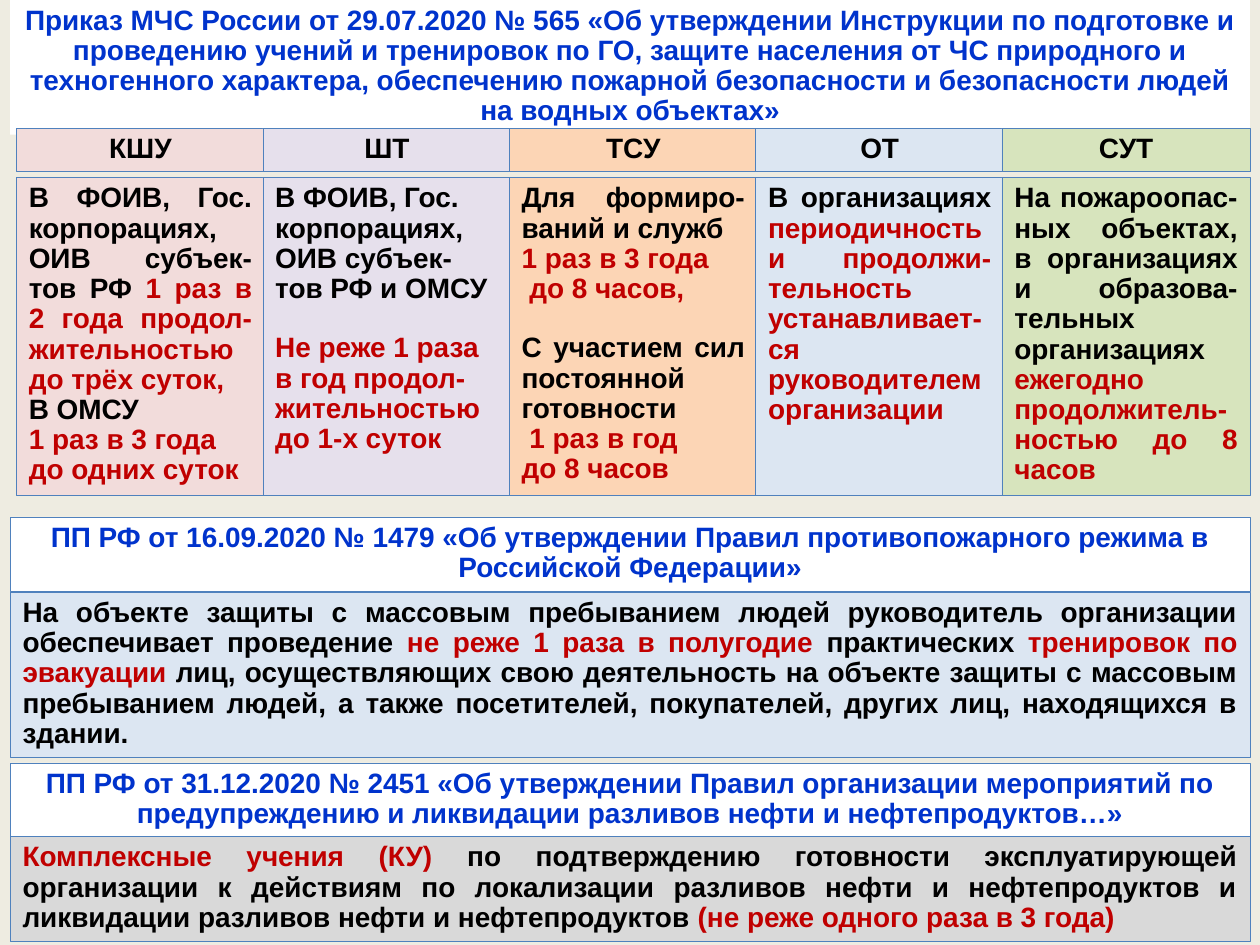
from dataclasses import dataclass

from pptx import Presentation
from pptx.dml.color import RGBColor
from pptx.enum.shapes import MSO_SHAPE
from pptx.enum.text import MSO_ANCHOR, MSO_AUTO_SIZE, PP_ALIGN
from pptx.util import Pt


@dataclass(frozen=True)
class Theme:
    font: str = "Arial"
    size: float = 16
    lines: float = 0.9
    gap: float = 16.6
    edge: float = 0.25
    back: str = "EEECE1"
    white: str = "FFFFFF"
    gray: str = "D9D9D9"
    pink: str = "F2DCDB"
    lilac: str = "E6E0EC"
    peach: str = "FCD5B5"
    sky: str = "DCE6F2"
    green: str = "D7E4BD"
    line: str = "4F81BD"
    ink: str = "000000"
    red: str = "C00000"
    blue: str = "0033CC"


@dataclass(frozen=True)
class Para:
    """Runs of (text, colour), with an optional empty line's space above."""
    runs: tuple
    gap: bool = False


T = Theme()
CENTER, LEFT, FULL = PP_ALIGN.CENTER, PP_ALIGN.LEFT, PP_ALIGN.JUSTIFY


def rgb(code):
    return RGBColor.from_string(code)


def para(*runs, gap=False):
    return Para(runs, gap)


def black(text, gap=False):
    return para((text, T.ink), gap=gap)


def red(text, gap=False):
    return para((text, T.red), gap=gap)


def write(frame, paras, align):
    frame.word_wrap = True
    frame.auto_size = MSO_AUTO_SIZE.SHAPE_TO_FIT_TEXT
    frame.vertical_anchor = MSO_ANCHOR.TOP
    for i, item in enumerate(paras):
        line = frame.add_paragraph() if i else frame.paragraphs[0]
        line.alignment = align
        line.line_spacing = T.lines
        if item.gap:
            line.space_before = Pt(T.gap)
        for text, color in item.runs:
            run = line.add_run()
            run.text = text
            run.font.name = T.font
            run.font.size = Pt(T.size)
            run.font.bold = True
            run.font.color.rgb = rgb(color)


def box(slide, area, fill, paras, align=FULL, edge=True):
    shape = slide.shapes.add_shape(MSO_SHAPE.RECTANGLE, *map(Pt, area))
    shape.shadow.inherit = False
    shape.fill.solid()
    shape.fill.fore_color.rgb = rgb(fill)
    if edge:
        shape.line.color.rgb = rgb(T.line)
        shape.line.width = Pt(T.edge)
    else:
        shape.line.fill.background()
    write(shape.text_frame, paras, align)


def band(slide, top, height, fill, paras, align=FULL, edge=True):
    """Box across the full width of the slide."""
    box(slide, (5.8, top, 708.5, height), fill, paras, align, edge)


def title(slide, top, height, text, edge=True):
    band(slide, top, height, T.white, [para((text, T.blue))], CENTER, edge)


COLUMNS = [
    ("КШУ", T.pink, FULL, [
        para(("В ФОИВ, Гос. корпорациях, ОИВ субъек-тов РФ ", T.ink),
             ("1 раз в 2 года продол-жительностью", T.red)),
        red("до трёх суток,"),
        black("В ОМСУ"),
        red("1 раз в 3 года"),
        red("до одних суток")]),
    ("ШТ", T.lilac, LEFT, [
        black("В ФОИВ, Гос. корпорациях, ОИВ субъек-тов РФ и ОМСУ"),
        red("Не реже 1 раза в год продол-жительностью до 1-х суток",
            gap=True)]),
    ("ТСУ", T.peach, FULL, [
        black("Для формиро-ваний и служб"),
        red("1 раз в 3 года"),
        red(" до 8 часов,"),
        black("С участием сил постоянной готовности", gap=True),
        red(" 1 раз в год"),
        red("до 8 часов")]),
    ("ОТ", T.sky, FULL, [
        para(("В организациях ", T.ink),
             ("периодичность и продолжи-тельность устанавливает-ся "
              "руководителем организации", T.red))]),
    ("СУТ", T.green, FULL, [
        para(("На пожароопас-ных объектах, в организациях и "
              "образова-тельных организациях ", T.ink),
             ("ежегодно продолжитель-ностью до 8 часов", T.red))]),
]


def columns(slide):
    left, step, width = 9.4, 140.8, 141.8
    for i, (name, fill, align, paras) in enumerate(COLUMNS):
        x = left + i * step
        box(slide, (x, 73.4, width, 24.5), fill, [black(name)], CENTER)
        box(slide, (x, 101.5, width, 181.4), fill, paras, align)


def main():
    deck = Presentation()
    deck.slide_width, deck.slide_height = Pt(720), Pt(540)
    slide = deck.slides.add_slide(deck.slide_layouts[6])
    slide.background.fill.solid()
    slide.background.fill.fore_color.rgb = rgb(T.back)

    title(slide, 0, 77, "Приказ МЧС России от 29.07.2020 № 565 "
          "«Об утверждении Инструкции по подготовке и проведению учений и "
          "тренировок по ГО, защите населения от ЧС природного и "
          "техногенного характера, обеспечению пожарной безопасности и "
          "безопасности людей на водных объектах»", edge=False)
    columns(slide)

    title(slide, 295.4, 42.2, "ПП РФ от 16.09.2020 № 1479 «Об утверждении "
          "Правил противопожарного режима в Российской Федерации»")
    band(slide, 338.4, 94.6, T.sky, [para(
        ("На объекте защиты с массовым пребыванием людей руководитель "
         "организации обеспечивает проведение ", T.ink),
        ("не реже 1 раза в полугодие ", T.red),
        ("практических ", T.ink),
        ("тренировок по эвакуации ", T.red),
        ("лиц, осуществляющих свою деятельность на объекте защиты с "
         "массовым пребыванием людей, а также посетителей, покупателей, "
         "других лиц, находящихся в здании.", T.ink))])

    title(slide, 435.9, 42.2, "ПП РФ от 31.12.2020 № 2451 «Об утверждении "
          "Правил организации мероприятий по предупреждению и ликвидации "
          "разливов нефти и нефтепродуктов…»")
    band(slide, 478.1, 59.8, T.gray, [para(
        ("Комплексные учения (КУ) ", T.red),
        ("по подтверждению готовности эксплуатирующей организации к "
         "действиям по локализации разливов нефти и нефтепродуктов и "
         "ликвидации разливов нефти и нефтепродуктов ", T.ink),
        ("(не реже одного раза в 3 года)", T.red))])

    deck.save("out.pptx")


if __name__ == "__main__":
    main()
